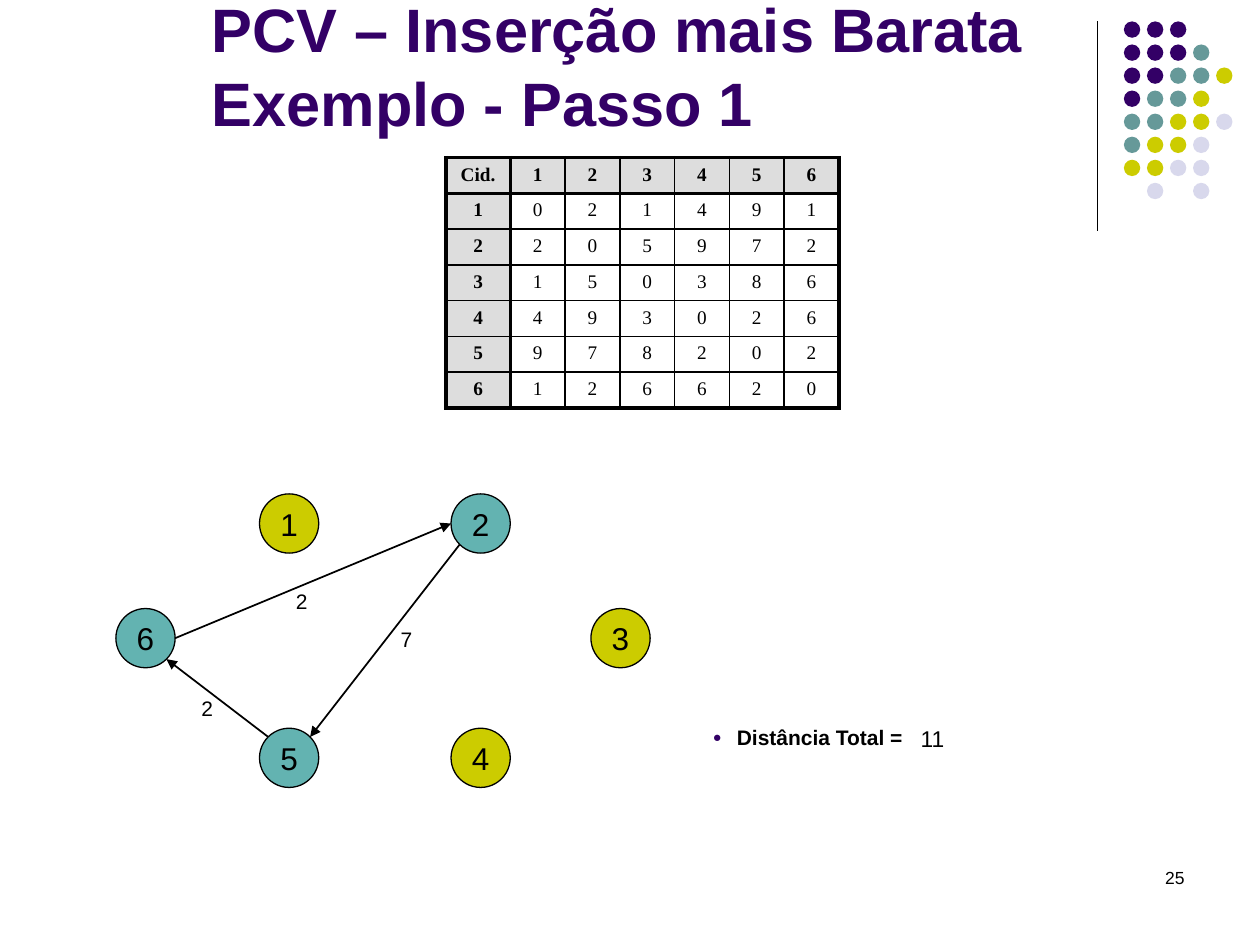
from dataclasses import dataclass
from math import sqrt

from lxml.etree import SubElement
from pptx import Presentation
from pptx.dml.color import RGBColor
from pptx.enum.shapes import MSO_CONNECTOR as Connector, MSO_SHAPE as Shape
from pptx.enum.text import MSO_ANCHOR as Anchor, PP_ALIGN as Align
from pptx.oxml.ns import qn
from pptx.util import Inches, Pt


@dataclass(frozen=True)
class Theme:
    sans: str = "Arial"
    serif: str = "Times New Roman"
    ink: str = "000000"
    purple: str = "330066"
    teal: str = "669999"
    olive: str = "CCCC00"
    lilac: str = "D8D8EC"
    visited: str = "63B3B1"
    header: str = "DDDDDD"
    title_size: float = 35
    node_size: float = 18
    total_size: float = 13
    label_size: float = 12
    table_size: float = 11
    number_size: float = 10
    thin: float = 1
    thick: float = 2.25
    outline: float = 0.75


@dataclass(frozen=True)
class Box:
    left: float
    top: float
    width: float
    height: float

    def lengths(self):
        return [Inches(v) for v in (self.left, self.top, self.width, self.height)]


THEME = Theme()
DISTANCES = [
    [0, 2, 1, 4, 9, 1],
    [2, 0, 5, 9, 7, 2],
    [1, 5, 0, 3, 8, 6],
    [4, 9, 3, 0, 2, 6],
    [9, 7, 8, 2, 0, 2],
    [1, 2, 6, 6, 2, 0],
]
DOT_ROWS = ["PPP", "PPPT", "PPTTO", "PTTO", "TTOOL", "TOOL", "OOLL", " L L"]
NODES = {
    1: (1.14, 0), 4: (2.66, 1.86), 3: (3.77, 0.91),
    2: (2.66, 0), 5: (1.14, 1.86), 6: (0, 0.91),
}
NODE_SIDE = 0.47
DIAGONAL = 1 / sqrt(2)
TOUR = [
    (6, (1, 0), 2, (-1, 0), (1.33, 0.7)),
    (2, (-DIAGONAL, DIAGONAL), 5, (DIAGONAL, -DIAGONAL), (2.16, 1)),
    (5, (-DIAGONAL, -DIAGONAL), 6, (DIAGONAL, DIAGONAL), (0.58, 1.55)),
]


def color(value):
    return RGBColor.from_string(value)


def apply(target, values):
    for name, value in values.items():
        setattr(target, name, value)


def write(frame, text, size, align=Align.LEFT, bold=False, font=THEME.sans, ink=THEME.ink):
    para = frame.paragraphs[0]
    para.text = text
    para.alignment = align
    for span in para.runs:
        apply(span.font, {"name": font, "size": Pt(size), "bold": bold})
        span.font.color.rgb = color(ink)
    return para


def add_text(page, box, text, size, align=Align.CENTER, wrap=False, bold=False):
    frame = page.shapes.add_textbox(*box.lengths()).text_frame
    frame.word_wrap = wrap
    return write(frame, text, size, align, bold)


def add_circle(shapes, box, fill):
    circle = shapes.add_shape(Shape.OVAL, *box.lengths())
    circle.shadow.inherit = False
    circle.fill.solid()
    circle.fill.fore_color.rgb = color(fill)
    circle.line.fill.background()
    return circle


def add_line(page, start, end, width, arrow=False):
    ends = [Inches(v) for v in (*start, *end)]
    line = page.shapes.add_connector(Connector.STRAIGHT, *ends)
    line.line.color.rgb = color(THEME.ink)
    line.line.width = Pt(width)
    if arrow:
        SubElement(line.line._get_or_add_ln(), qn("a:tailEnd"), type="triangle")
    SubElement(line._element.spPr, qn("a:effectLst"))


def add_title(page, box):
    title = page.shapes.title
    apply(title, dict(zip(("left", "top", "width", "height"), box.lengths())))
    apply(title.text_frame, {"vertical_anchor": Anchor.BOTTOM, "word_wrap": True})
    write(title.text_frame, "PCV – Inserção mais Barata\vExemplo - Passo 1",
          THEME.title_size, bold=True, ink=THEME.purple)


def add_ornament(page, box):
    add_line(page, (box.left, box.top), (box.left, box.top + box.height), THEME.outline)
    fills = {"P": THEME.purple, "T": THEME.teal, "O": THEME.olive, "L": THEME.lilac}
    pitch, side = 0.183, 0.13
    dots = page.shapes.add_group_shape()
    for row, marks in enumerate(DOT_ROWS):
        for column, mark in enumerate(marks):
            if mark in fills:
                spot = Box(box.left + 0.21 + column * pitch, box.top + row * pitch, side, side)
                add_circle(dots.shapes, spot, fills[mark])


def add_borders(cell, row, column, last):
    edges = {"a:lnL": column, "a:lnR": column + 1, "a:lnT": row, "a:lnB": row + 1}
    properties = cell._tc.get_or_add_tcPr()
    for tag, edge in edges.items():
        width = THEME.thick if edge in (0, 1, last) else THEME.thin
        border = SubElement(properties, qn(tag), w=str(Pt(width)))
        SubElement(SubElement(border, qn("a:solidFill")), qn("a:srgbClr"), val=THEME.ink)


def add_distances(page, box):
    cities = range(1, len(DISTANCES) + 1)
    rows = [["Cid.", *cities]] + [[city, *line] for city, line in zip(cities, DISTANCES)]
    count = len(rows)
    table = page.shapes.add_table(count, count, *box.lengths()).table
    apply(table, {"first_row": False, "horz_banding": False})
    first = 0.51
    for index, column in enumerate(table.columns):
        column.width = Inches((box.width - first) / (count - 1) if index else first)
    for r, values in enumerate(rows):
        table.rows[r].height = Inches(box.height / count)
        for c, value in enumerate(values):
            cell = table.cell(r, c)
            heading = r == 0 or c == 0
            add_borders(cell, r, c, count)
            if heading:
                cell.fill.solid()
                cell.fill.fore_color.rgb = color(THEME.header)
            else:
                cell.fill.background()
            write(cell.text_frame, str(value), THEME.table_size, Align.CENTER, heading, THEME.serif)


def add_graph(page, box):
    visited = {stop[0] for stop in TOUR}
    radius = NODE_SIDE / 2
    for city, (x, y) in NODES.items():
        spot = Box(box.left + x, box.top + y, NODE_SIDE, NODE_SIDE)
        node = add_circle(page.shapes, spot, THEME.visited if city in visited else THEME.olive)
        node.line.color.rgb = color(THEME.ink)
        node.line.width = Pt(THEME.outline)
        apply(node.text_frame, {"word_wrap": False, "vertical_anchor": Anchor.MIDDLE})
        write(node.text_frame, str(city), THEME.node_size, Align.CENTER)

    def rim(city, direction):
        origin = (box.left, box.top)
        return [o + n + radius * (1 + d) for o, n, d in zip(origin, NODES[city], direction)]

    for start, leaving, end, entering, (x, y) in TOUR:
        add_line(page, rim(start, leaving), rim(end, entering), THEME.thin, arrow=True)
        add_text(page, Box(box.left + x, box.top + y, 0.29, 0.3),
                 str(DISTANCES[start - 1][end - 1]), THEME.label_size)


def add_total(page, box):
    para = add_text(page, box, "Distância Total =", THEME.label_size, Align.LEFT, True, True)
    para.space_before = Pt(0.2 * THEME.label_size)
    properties = para._p.get_or_add_pPr()
    properties.set("marL", str(Inches(0.19)))
    properties.set("indent", str(-Inches(0.19)))
    SubElement(SubElement(properties, qn("a:buClr")), qn("a:srgbClr"), val=THEME.purple)
    SubElement(properties, qn("a:buSzPct"), val="70000")
    SubElement(properties, qn("a:buFont"), typeface=THEME.sans)
    SubElement(properties, qn("a:buChar"), char="●")
    total = sum(DISTANCES[stop[0] - 1][stop[2] - 1] for stop in TOUR)
    add_text(page, Box(box.left + 1.64, box.top, 0.4, 0.32), str(total), THEME.total_size)


def main():
    deck = Presentation()
    apply(deck, {"slide_width": Inches(10), "slide_height": Inches(7.5)})
    page = deck.slides.add_slide(deck.slide_layouts.get_by_name("Title Only"))
    add_ornament(page, Box(8.71, 0.17, 1.07, 1.66))
    add_text(page, Box(7.17, 6.83, 2.33, 0.5), "25", THEME.number_size, Align.RIGHT, True)
    add_title(page, Box(1.58, 0.45, 7.08, 0.7))
    add_distances(page, Box(3.54, 1.25, 3.12, 1.98))
    add_total(page, Box(5.56, 5.7, 2.23, 0.45))
    add_graph(page, Box(0.92, 3.92, 4.24, 2.33))
    deck.save("out.pptx")


if __name__ == "__main__":
    main()
